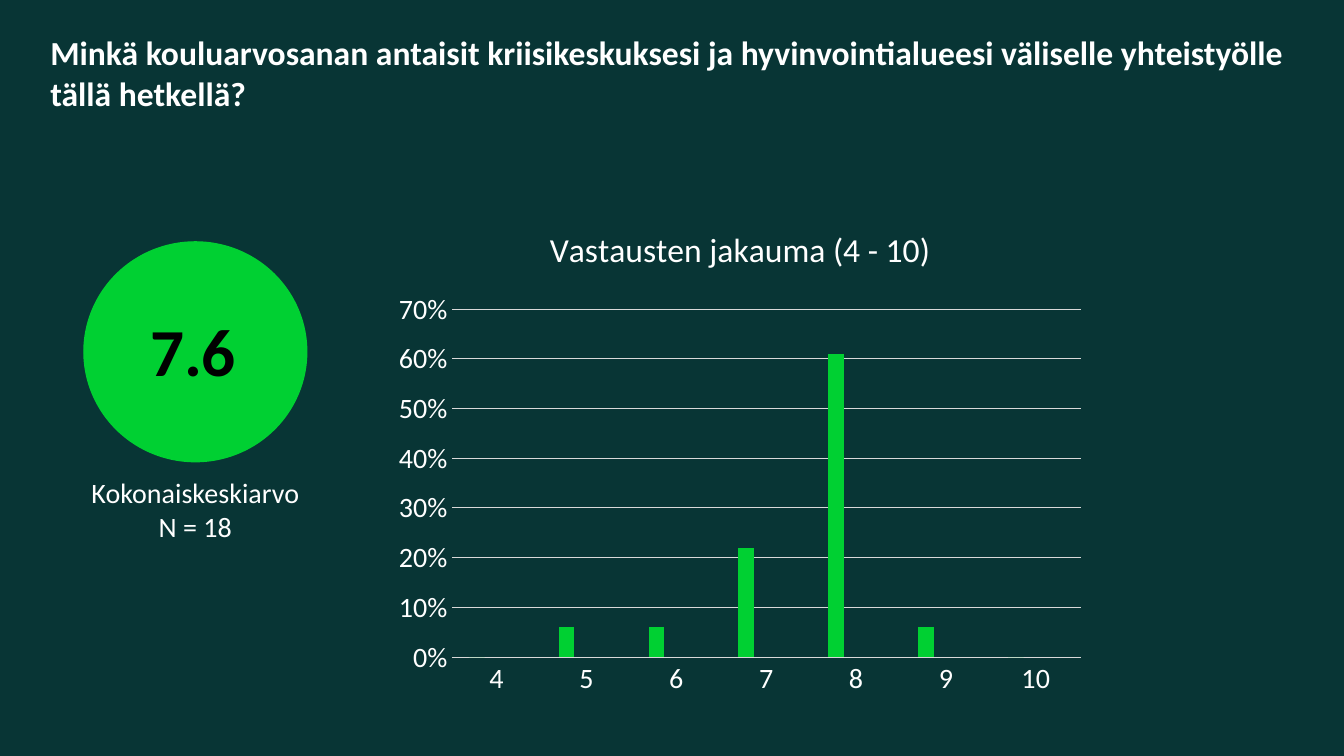
from dataclasses import dataclass

from lxml import etree
from pptx import Presentation
from pptx.chart.data import CategoryChartData
from pptx.dml.color import RGBColor
from pptx.enum.chart import XL_CHART_TYPE, XL_TICK_MARK
from pptx.enum.shapes import MSO_SHAPE
from pptx.enum.text import PP_ALIGN
from pptx.oxml.ns import qn
from pptx.util import Inches, Pt

COLUMN_CLUSTERED = XL_CHART_TYPE.COLUMN_CLUSTERED
NO_TICK = XL_TICK_MARK.NONE
OVAL = MSO_SHAPE.OVAL
LEFT, CENTER = PP_ALIGN.LEFT, PP_ALIGN.CENTER

COLUMNS, ROWS = 40, 30


@dataclass(frozen=True)
class Theme:
    font: str = "Calibri"
    background: str = "083535"
    light: str = "FFFFFF"
    dark: str = "000000"
    accent: str = "00D032"
    grid: str = "D9D9D9"
    series: tuple = ("00D032", "19413D", "C8F5C8")
    heading: int = 24
    body: int = 20
    score: int = 48


def paint(fill, color):
    fill.solid()
    fill.fore_color.rgb = RGBColor.from_string(color)


def draw_line(line, color, width):
    paint(line.fill, color)
    line.width = Pt(width)


def style_font(font, name, size, color, bold=False):
    font.name, font.size, font.bold = name, Pt(size), bold
    font.color.rgb = RGBColor.from_string(color)


def write_text(text_frame, text, *, font, size, color, bold=False, align=LEFT):
    """Write each line of the text as a paragraph of its own."""
    for index, line in enumerate(text.split("\n")):
        paragraph = text_frame.paragraphs[0] if index == 0 else text_frame.add_paragraph()
        paragraph.alignment = align
        run = paragraph.add_run()
        run.text = line
        style_font(run.font, font, size, color, bold)


def place_plot(chart, **shares):
    """Fix the inner plot area, in shares of the chart's size."""
    plot_area = chart.plots[0]._element.getparent()
    layout = plot_area.find(qn("c:layout"))
    if layout is None:
        layout = etree.Element(qn("c:layout"))
        plot_area.insert(0, layout)
    manual = etree.SubElement(layout, qn("c:manualLayout"))
    settings = {"layoutTarget": "inner", "xMode": "edge", "yMode": "edge", **shares}
    for tag, value in settings.items():
        etree.SubElement(manual, qn(f"c:{tag}")).set("val", str(value))


class SlideBuilder:
    def __init__(self, presentation, theme):
        self.theme = theme
        self.column = presentation.slide_width / COLUMNS
        self.row = presentation.slide_height / ROWS
        self.slide = presentation.slides.add_slide(presentation.slide_layouts[6])
        paint(self.slide.background.fill, theme.background)

    def cells(self, left, top, width, height):
        return (round(left * self.column), round(top * self.row),
                round(width * self.column), round(height * self.row))

    def text(self, text, area, **text_format):
        text_frame = self.slide.shapes.add_textbox(*self.cells(*area)).text_frame
        text_frame.word_wrap = True
        settings = {"font": self.theme.font, "color": self.theme.light, **text_format}
        write_text(text_frame, text, **settings)

    def circle(self, area):
        shape = self.slide.shapes.add_shape(OVAL, *self.cells(*area))
        shape.shadow.inherit = False
        paint(shape.fill, self.theme.accent)
        draw_line(shape.line, self.theme.accent, 1)

    def column_chart(self, title, categories, series, area):
        theme = self.theme
        data = CategoryChartData(number_format="0%")
        data.categories = categories
        for name, values in series.items():
            data.add_series(name, values)
        chart = self.slide.shapes.add_chart(
            COLUMN_CLUSTERED, *self.cells(*area), data).chart
        style_font(chart.font, theme.font, theme.body, theme.light)
        chart.has_legend = False
        chart.has_title = True
        write_text(chart.chart_title.text_frame, title, font=theme.font,
                   size=theme.heading, color=theme.light, align=CENTER)
        chart.chart_title.include_in_layout = False

        plot = chart.plots[0]
        plot.gap_width, plot.overlap, plot.vary_by_categories = 219, -27, False
        for item, color in zip(plot.series, theme.series):
            paint(item.format.fill, color)
        for axis in (chart.category_axis, chart.value_axis):
            axis.major_tick_mark = axis.minor_tick_mark = NO_TICK
            style_font(axis.tick_labels.font, theme.font, theme.body, theme.light)
        draw_line(chart.category_axis.format.line, theme.grid, 0.75)

        value_axis = chart.value_axis
        value_axis.format.line.fill.background()
        value_axis.minimum_scale, value_axis.maximum_scale = 0, 0.7
        value_axis.major_unit = 0.1
        value_axis.tick_labels.number_format = "0%"
        value_axis.tick_labels.number_format_is_linked = False
        draw_line(value_axis.major_gridlines.format.line, theme.grid, 0.75)
        place_plot(chart, x=0.094, y=0.207, w=0.886, h=0.696)


def main():
    presentation = Presentation()
    presentation.slide_width, presentation.slide_height = Inches(13.33), Inches(7.5)
    theme = Theme()
    builder = SlideBuilder(presentation, theme)

    builder.text("Minkä kouluarvosanan antaisit kriisikeskuksesi ja hyvinvointialueesi "
                 "väliselle yhteistyölle tällä hetkellä?",
                 (1.2, 1.08, 38, 4.36), size=theme.heading, bold=True)
    builder.circle((2.5, 9.6, 6.63, 8.72))
    builder.text("Kokonaiskeskiarvo\nN = 18", (2.2, 18.68, 7.23, 3.08),
                 size=theme.body, align=CENTER)

    grades = [str(grade) for grade in range(4, 11)]
    series = {
        "Series 1": (0, 0.06, 0.06, 0.22, 0.61, 0.06, 0),
        "Series 2": (None,) * len(grades),
        "Series 3": (None,) * len(grades),
    }
    builder.column_chart("Vastausten jakauma (4 - 10)", grades, series,
                         (11.46, 8.16, 21.13, 19.84))
    builder.text("7.6", (4.17, 12.08, 3.24, 3.64),
                 size=theme.score, color=theme.dark, bold=True)
    presentation.save("out.pptx")


if __name__ == "__main__":
    main()
